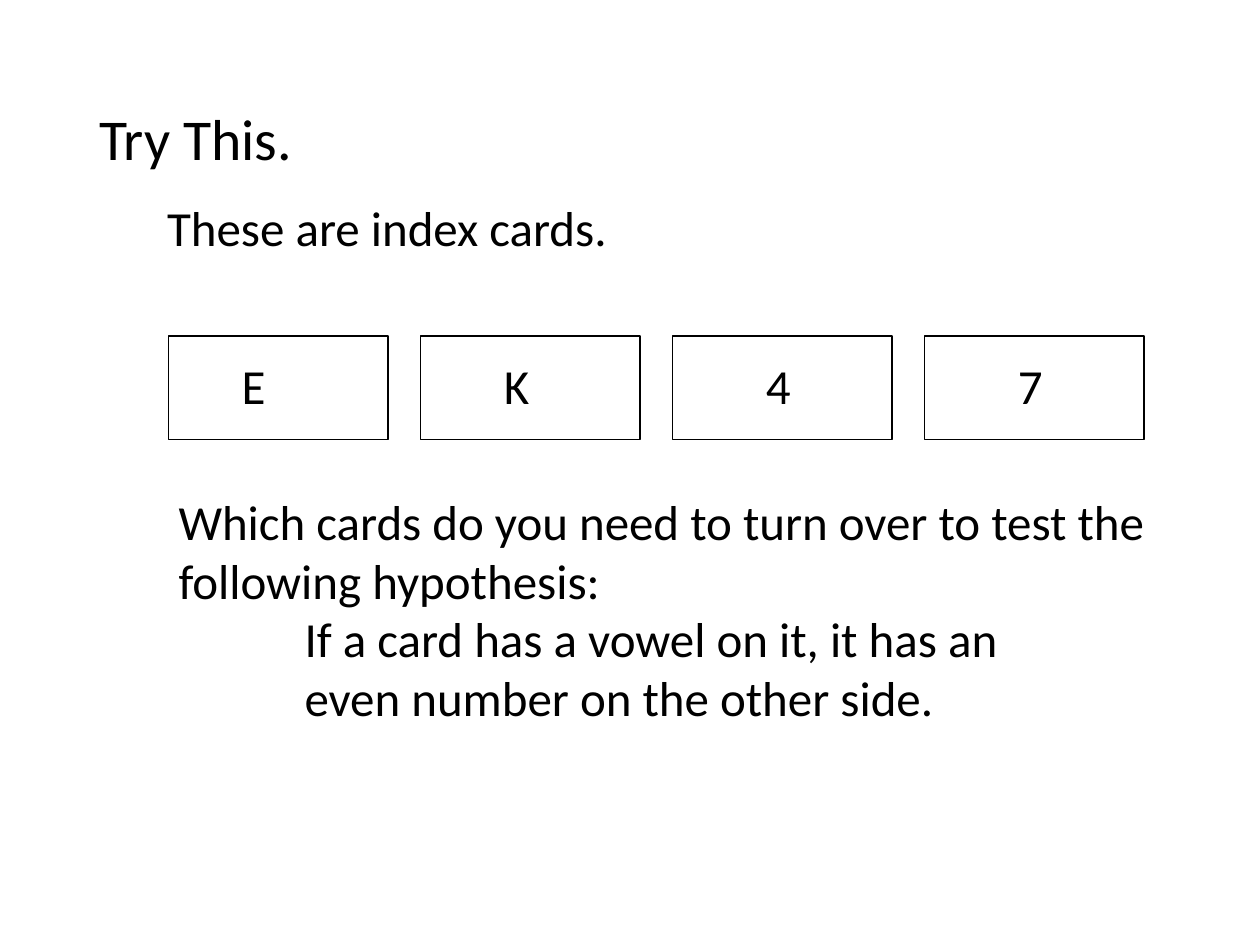
from dataclasses import dataclass

import pptx
import pptx.dml.color
import pptx.enum.shapes
import pptx.enum.text
import pptx.util
from pptx.util import Cm

FONT = "Calibri"
BLACK = "000000"
WHITE = "FFFFFF"
CARD_LEFT, CARD_TOP, CARD_PITCH = 3.4, 6.78, 5.08
CARD_WIDTH, CARD_HEIGHT = 4.42, 2.08
LABEL_TOP, LABEL_HEIGHT = 7.04, 1.45


@dataclass
class Card:
    label: str
    label_left: float
    label_width: float


CARDS = [
    Card("E", 4.62, 0.99),
    Card("K", 9.91, 1.22),
    Card("4", 15.19, 1.02),
    Card("7", 20.27, 1.02),
]


def rgb(value: str) -> pptx.dml.color.RGBColor:
    return pptx.dml.color.RGBColor.from_string(value)


def add_text(s, text: str, left: float, top: float, width: float, height: float, *,
             size: int = 28, fill: str | None = None, wrap: bool = True,
             grow: bool = True, anchor=pptx.enum.text.MSO_ANCHOR.TOP,
             line_spacing: float | None = None, indents: tuple[float, ...] = ()):
    """Add a text box with one paragraph per line; indents are in cm, line by line."""
    sp = s.shapes.add_textbox(Cm(left), Cm(top), Cm(width), Cm(height))
    if fill:
        sp.fill.solid()
        sp.fill.fore_color.rgb = rgb(fill)
    tf = sp.text_frame
    tf.word_wrap = wrap
    tf.vertical_anchor = anchor
    sizes = pptx.enum.text.MSO_AUTO_SIZE
    tf.auto_size = sizes.SHAPE_TO_FIT_TEXT if grow else sizes.NONE
    tf.text = text
    for p in tf.paragraphs:
        p.line_spacing = line_spacing
        for r in p.runs:
            r.font.name = FONT
            r.font.size = pptx.util.Pt(size)
            r.font.color.rgb = rgb(BLACK)
    for p, indent in zip(tf.paragraphs, indents):
        p._p.get_or_add_pPr().set("marL", str(Cm(indent)))
    return sp


def add_card(s, left: float) -> None:
    sp = s.shapes.add_shape(pptx.enum.shapes.MSO_SHAPE.RECTANGLE, Cm(left),
                            Cm(CARD_TOP), Cm(CARD_WIDTH), Cm(CARD_HEIGHT))
    sp.shadow.inherit = False
    sp.fill.solid()
    sp.fill.fore_color.rgb = rgb(WHITE)
    sp.line.color.rgb = rgb(BLACK)
    sp.line.width = pptx.util.Pt(1)


def main() -> None:
    prs = pptx.Presentation()
    prs.slide_width, prs.slide_height = Cm(25.4), Cm(19.05)
    s = prs.slides.add_slide(prs.slide_layouts[6])

    add_text(s, "Try This.", 1.75, 1.02, 21.9, 3.68, size=33, grow=False,
             anchor=pptx.enum.text.MSO_ANCHOR.MIDDLE, line_spacing=0.9)
    for i, card in enumerate(CARDS):
        add_card(s, CARD_LEFT + i * CARD_PITCH)
        add_text(s, card.label, card.label_left, LABEL_TOP, card.label_width,
                 LABEL_HEIGHT, fill=WHITE, wrap=False)
    add_text(s, "These are index cards.", 3.12, 3.86, 10.19, 1.45, wrap=False)
    question = [
        "Which cards do you need to turn over to test the",
        "following hypothesis:",
        "If a card has a vowel on it, it has an",
        "even number on the other side.",
    ]
    add_text(s, "\n".join(question), 3.35, 9.78, 21.87, 5,
             indents=(0, 0, 2.54, 2.54))
    prs.save("out.pptx")


if __name__ == "__main__":
    main()
